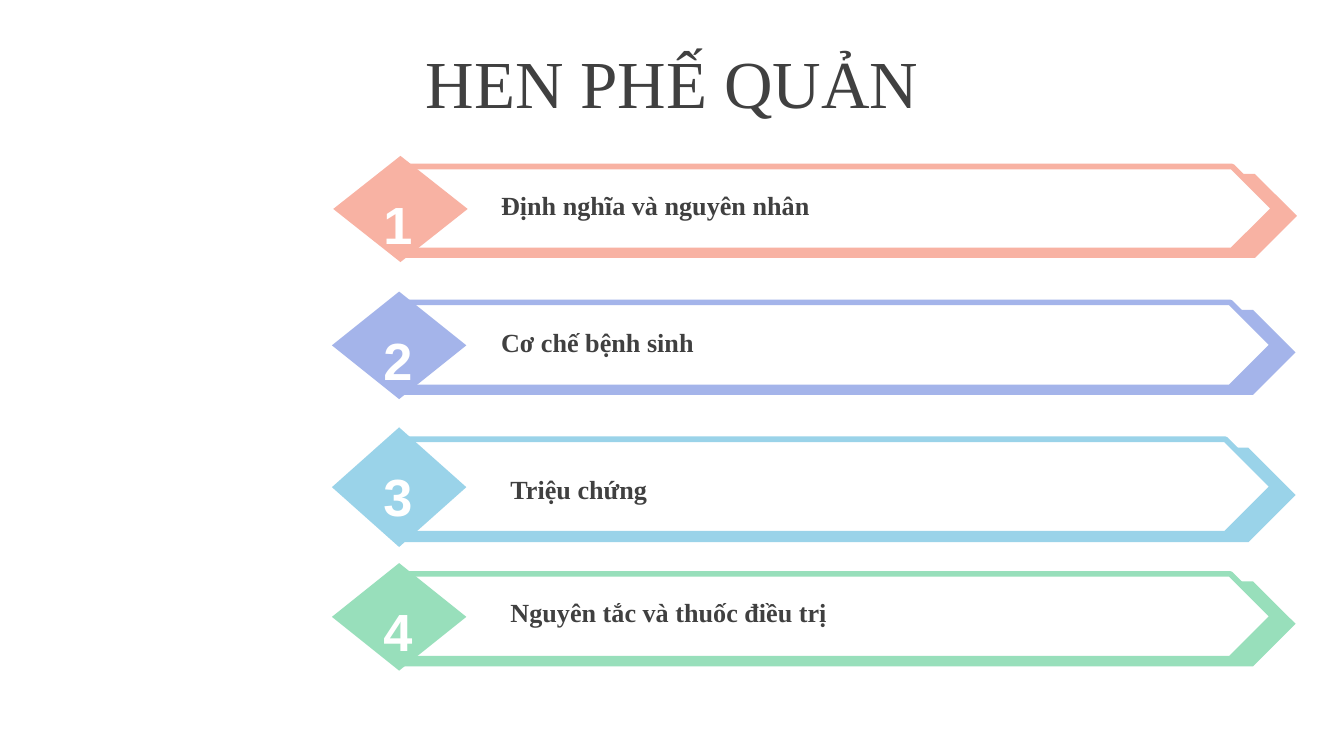
from pptx import Presentation
from pptx.dml.color import RGBColor
from pptx.enum.shapes import MSO_SHAPE
from pptx.enum.text import MSO_ANCHOR, MSO_AUTO_SIZE, PP_ALIGN
from pptx.util import Inches, Pt

COLORS = {
    "background": "FFFFFF",
    "text": "404040",
    "coral": "F8B2A3",
    "periwinkle": "A4B4EA",
    "sky": "9AD3E9",
    "mint": "98DFBB",
}
TITLE_FONT = {"name": "Times New Roman", "size": Pt(36), "bold": False}
LABEL_FONT = {"name": "Times New Roman", "size": Pt(14), "bold": True}
NUMBER_FONT = {"name": "Arial", "size": Pt(28), "bold": True}

ROW_LEFT, ROW_TOP, ROW_STEP = 2.47, 1.16, 1.01
ROWS = [
    ("Định nghĩa và nguyên nhân", "coral", 0.01, 0.79, 1.16, 0.20),
    ("Cơ chế bệnh sinh", "periwinkle", 0, 0.8, 1.16, 0.21),
    ("Triệu chứng", "sky", 0, 0.89, 1.23, 0.29),
    ("Nguyên tắc và thuốc điều trị", "mint", 0, 0.8, 1.23, 0.20),
]


def color(name):
    """Return the named palette colour."""
    return RGBColor.from_string(COLORS[name])


def place(shape, left, top, width, height):
    """Move and size a shape in inches."""
    box = {"left": left, "top": top, "width": width, "height": height}
    for name, value in box.items():
        setattr(shape, name, Inches(value))


def write(shape, text, font, color_name, alignment, anchor):
    """Fill a shape with one formatted paragraph."""
    frame = shape.text_frame
    settings = {"word_wrap": True, "auto_size": MSO_AUTO_SIZE.NONE, "vertical_anchor": anchor}
    for name, value in settings.items():
        setattr(frame, name, value)
    paragraph = frame.paragraphs[0]
    paragraph.alignment = alignment
    run = paragraph.add_run()
    run.text = text
    for name, value in font.items():
        setattr(run.font, name, value)
    run.font.color.rgb = color(color_name)


def add_text(slide, box, *content):
    """Add a text box with formatted content."""
    write(slide.shapes.add_textbox(*map(Inches, box)), *content)


def add_part(group, kind, box, fill, line=None):
    """Add one filled, optionally outlined part to a banner."""
    shape = group.shapes.add_shape(kind, *map(Inches, box))
    shape.shadow.inherit = False
    shape.fill.solid()
    shape.fill.fore_color.rgb = color(fill)
    if line:
        shape.line.color.rgb = color(line)
        shape.line.width = Pt(3)
    else:
        shape.line.fill.background()


def add_banner(slide, left, top, height, accent):
    """Draw the layered arrow and its diamond from the row's top left."""
    group = slide.shapes.add_group_shape()
    plate_left, plate_height = left + 0.53, 0.79 * height
    back = (plate_left, top + 0.17 * height, 6.64, plate_height)
    front = (plate_left, top + 0.1 * height, 6.47, plate_height)
    add_part(group, MSO_SHAPE.PENTAGON, back, accent)
    add_part(group, MSO_SHAPE.PENTAGON, front, "background", accent)
    add_part(group, MSO_SHAPE.DIAMOND, (left, top, 1, height), accent)


def add_row(slide, number, left, top, row):
    """Add one numbered agenda row."""
    label, accent, shift, height, label_left, label_top = row
    add_banner(slide, left + shift, top, height, accent)
    add_text(slide, (left + 0.27, top + 0.22, 0.44, 0.57), str(number),
             NUMBER_FONT, "background", PP_ALIGN.CENTER, MSO_ANCHOR.MIDDLE)
    add_text(slide, (left + label_left, top + label_top, 5.2, 0.34), label,
             LABEL_FONT, "text", PP_ALIGN.LEFT, MSO_ANCHOR.TOP)


def add_title(slide, left, top, width, height):
    """Place the slide title in its placeholder."""
    title = slide.shapes.title
    place(title, left, top, width, height)
    write(title, "HEN PHẾ QUẢN", TITLE_FONT, "text", PP_ALIGN.CENTER, MSO_ANCHOR.MIDDLE)


def main():
    """Build and save the agenda slide."""
    presentation = Presentation()
    presentation.slide_width = Inches(10)
    presentation.slide_height = Inches(10 * 9 / 16)
    slide = presentation.slides.add_slide(presentation.slide_layouts[5])
    add_title(slide, 0, 0.29, 10, 0.63)
    for index, row in enumerate(ROWS):
        add_row(slide, index + 1, ROW_LEFT, ROW_TOP + index * ROW_STEP, row)
    presentation.save("out.pptx")


if __name__ == "__main__":
    main()
